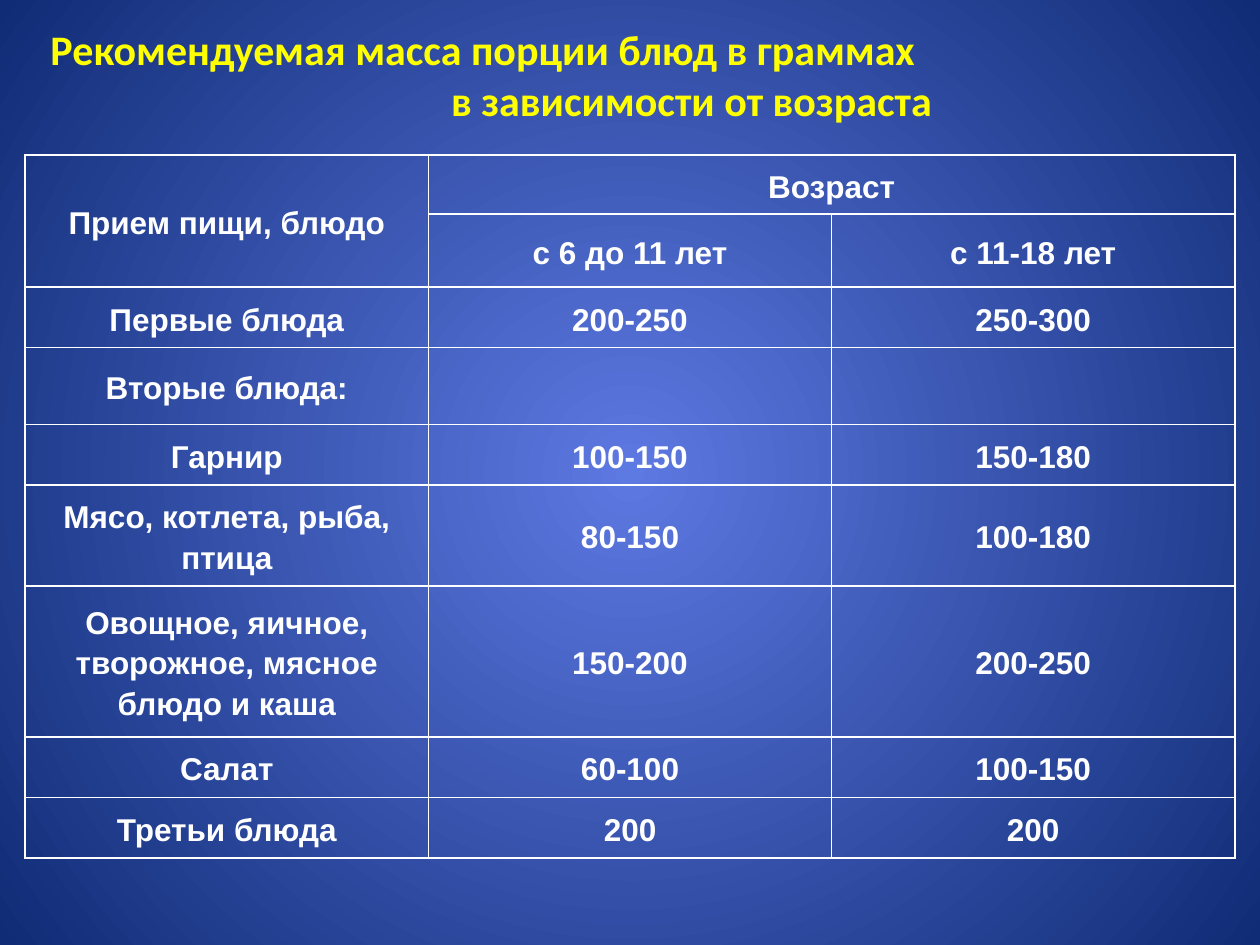
import pptx
import pptx.dml.color
import pptx.enum.text
import pptx.oxml
import pptx.oxml.ns
import pptx.util
from lxml import etree

Inches, Pt = pptx.util.Inches, pptx.util.Pt
RGBColor = pptx.dml.color.RGBColor
PP_ALIGN = pptx.enum.text.PP_ALIGN
MIDDLE = pptx.enum.text.MSO_ANCHOR.MIDDLE
qn = pptx.oxml.ns.qn

WHITE = RGBColor(0xFF, 0xFF, 0xFF)
YELLOW = RGBColor(0xFF, 0xFF, 0x00)
GLOW = RGBColor(0x5D, 0x79, 0xE2)
NAVY = RGBColor(0x10, 0x2C, 0x76)

HEADING = [  # text, left indent in inches
    ("Рекомендуемая масса порции блюд в граммах", 0.02),
    ("в зависимости от возраста", 3.2),
]
PORTIONS = [  # row height in inches, cell texts
    (0.47, ("Прием пищи, блюдо", "Возраст", "")),
    (0.58, ("", "с 6 до 11 лет", "с 11-18 лет")),
    (0.48, ("Первые блюда", "200-250", "250-300")),
    (0.61, ("Вторые блюда:", "", "")),
    (0.48, ("Гарнир", "100-150", "150-180")),
    (0.8, ("Мясо, котлета, рыба, птица", "80-150", "100-180")),
    (1.2, ("Овощное, яичное, творожное, мясное блюдо и каша", "150-200", "200-250")),
    (0.48, ("Салат", "60-100", "100-150")),
    (0.48, ("Третьи блюда", "200", "200")),
]
COLUMNS = 3
COLUMN_WIDTH = 3.2


def add_borders(cell):
    properties = cell._tc.get_or_add_tcPr()
    for side in ("lnL", "lnR", "lnT", "lnB"):
        line = etree.SubElement(properties, qn(f"a:{side}"), w=str(Pt(1)))
        fill = etree.SubElement(line, qn("a:solidFill"))
        etree.SubElement(fill, qn("a:srgbClr"), val=str(WHITE))


presentation = pptx.Presentation()
presentation.slide_width = Inches(10)
presentation.slide_height = Inches(7.5)
slide = presentation.slides.add_slide(presentation.slide_layouts[5])

# Radial background
backdrop = slide.background.fill
backdrop.gradient()
for stop, color in zip(backdrop.gradient_stops, (GLOW, NAVY)):
    stop.color.rgb = color
gradient = slide.element.find(".//" + qn("a:gradFill"))
gradient.remove(gradient.find(qn("a:lin")))
circle = etree.SubElement(gradient, qn("a:path"), {"path": "circle"})
etree.SubElement(circle, qn("a:fillToRect"), l="50000", t="50000", r="50000", b="50000")

# Heading
heading = slide.shapes.title
heading.left, heading.top = Inches(0.28), 0
heading.width, heading.height = Inches(9.53), Inches(1.18)
heading.text_frame.vertical_anchor = MIDDLE
heading.text_frame.text = "\n".join(text for text, _ in HEADING)
for paragraph, (_, indent) in zip(heading.text_frame.paragraphs, HEADING):
    paragraph._p.get_or_add_pPr().set("marL", str(Inches(indent)))
    paragraph.alignment = PP_ALIGN.LEFT
    paragraph.font.name = "Calibri"
    paragraph.font.size = Pt(24)
    paragraph.font.bold = True
    paragraph.font.color.rgb = YELLOW

# Portion table
portions = slide.shapes.add_table(
    len(PORTIONS), COLUMNS, Inches(0.2), Inches(1.23),
    Inches(COLUMNS * COLUMN_WIDTH), Inches(sum(height for height, _ in PORTIONS)),
).table
portions.first_row = portions.horz_banding = False
for column in portions.columns:
    column.width = Inches(COLUMN_WIDTH)

for row, (height, texts) in enumerate(PORTIONS):
    portions.rows[row].height = Inches(height)
    for column, text in enumerate(texts):
        cell = portions.cell(row, column)
        add_borders(cell)
        cell.fill.background()
        cell.vertical_anchor = MIDDLE
        cell.margin_left = cell.margin_right = Inches(0.01)
        cell.margin_top = cell.margin_bottom = Inches(0.01)
        cell.text = text
        paragraph = cell.text_frame.paragraphs[0]
        paragraph.alignment = PP_ALIGN.CENTER
        paragraph.line_spacing = 1.15
        paragraph.space_after = Pt(1)
        paragraph.font.name = "Arial"
        paragraph.font.size = Pt(18)
        paragraph.font.bold = True
        paragraph.font.color.rgb = WHITE

portions.cell(0, 0).merge(portions.cell(1, 0))
portions.cell(0, 1).merge(portions.cell(0, 2))

presentation.save("out.pptx")
